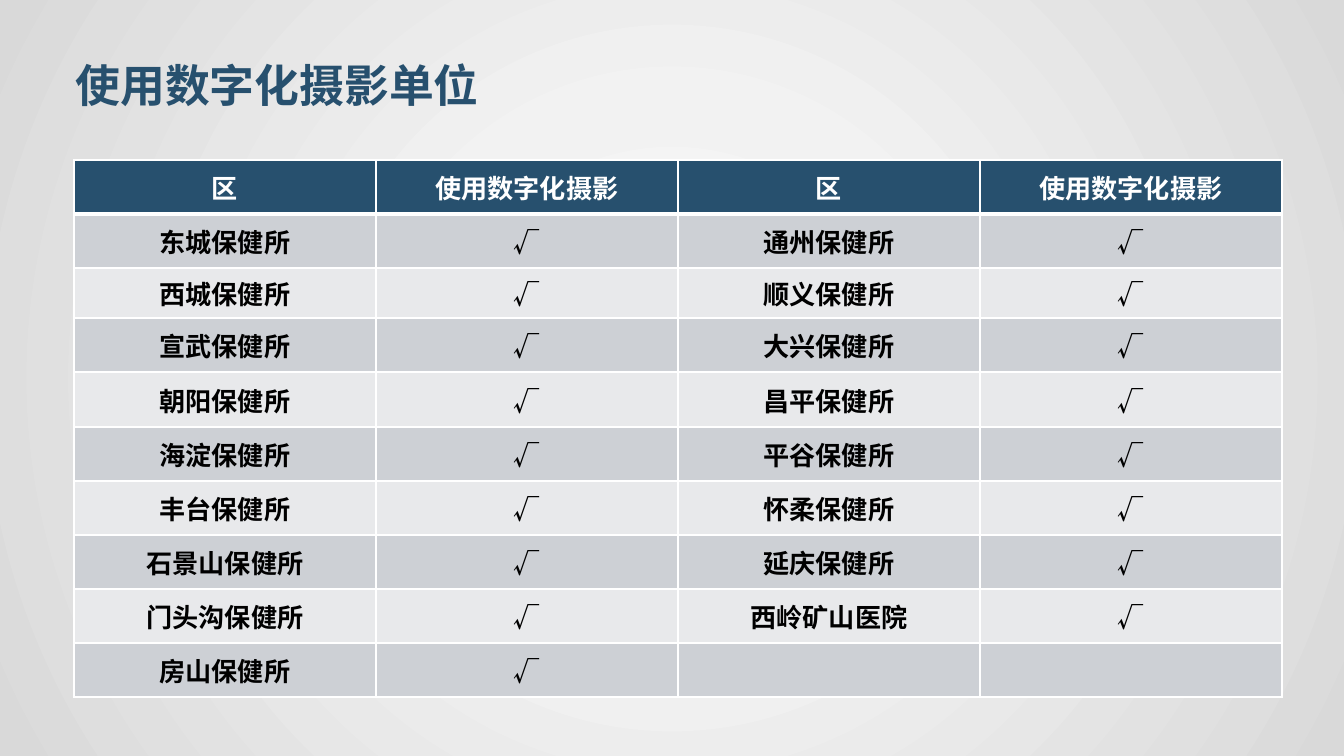
import pptx
import pptx.dml.color
import pptx.enum.text
import pptx.oxml
import pptx.oxml.ns
import pptx.util
from dataclasses import dataclass
from lxml import etree

PX = 6803.57  # EMU per px, at 134.4 px to the inch
NAMESPACES = pptx.oxml.ns.nsdecls("a")
qn = pptx.oxml.ns.qn


@dataclass(frozen=True)
class Theme:
    font: str = "Noto Sans CJK SC"
    navy: str = "27506E"
    white: str = "FFFFFF"
    black: str = "000000"
    bands: tuple = ("CDD0D5", "E8E9EB")
    background: tuple = ((0, "FFFFFF"), (35, "F2F2F2"), (100, "D9D9D9"))
    title_size: int = 24
    cell_size: int = 14
    thin: int = 1
    thick: int = 3


THEME = Theme()
HEADER = ("区", "使用数字化摄影")
LEFT_UNITS = ("东城保健所", "西城保健所", "宣武保健所", "朝阳保健所", "海淀保健所",
              "丰台保健所", "石景山保健所", "门头沟保健所", "房山保健所")
RIGHT_UNITS = ("通州保健所", "顺义保健所", "大兴保健所", "昌平保健所", "平谷保健所",
               "怀柔保健所", "延庆保健所", "西岭矿山医院", "")
ROW_HEIGHTS = (54, 54, 50, 54, 55, 54, 54, 54, 54, 54)
COLUMN_WIDTH = 302


def px(length):
    return pptx.util.Emu(round(length * PX))


def color(value):
    return pptx.dml.color.RGBColor.from_string(value)


def style_paragraph(paragraph, size, text_color, alignment):
    paragraph.alignment = alignment
    font = paragraph.font
    font.size = pptx.util.Pt(size)
    font.bold = True
    font.color.rgb = color(text_color)
    font.name = THEME.font


def set_east_asian_font(shape):
    for properties in shape.element.iter(qn("a:defRPr")):
        etree.SubElement(properties, qn("a:ea"), typeface=THEME.font)


def set_background(slide):
    fill = slide.background.fill
    fill.solid()
    stops = "".join(
        f'<a:gs pos="{position * 1000}"><a:srgbClr val="{value}"/></a:gs>'
        for position, value in THEME.background)
    gradient = pptx.oxml.parse_xml(
        f'<a:gradFill {NAMESPACES} rotWithShape="1"><a:gsLst>{stops}</a:gsLst>'
        '<a:path path="circle"><a:fillToRect l="50000" t="50000" r="50000" b="50000"/>'
        '</a:path></a:gradFill>')
    properties = next(slide.element.iter(qn("p:bgPr")))
    properties.replace(properties.find(qn("a:solidFill")), gradient)


def add_title(slide, text):
    title = slide.shapes.title
    title.left, title.top, title.width, title.height = map(px, (62, 51, 434, 67))
    frame = title.text_frame
    frame.text = text
    frame.word_wrap = False
    frame.vertical_anchor = pptx.enum.text.MSO_ANCHOR.MIDDLE
    style_paragraph(frame.paragraphs[0], THEME.title_size, THEME.navy,
                    pptx.enum.text.PP_ALIGN.LEFT)
    set_east_asian_font(title)


def set_borders(cell, top, bottom):
    properties = cell._tc.get_or_add_tcPr()
    sides = (("L", THEME.thin), ("R", THEME.thin), ("T", top), ("B", bottom))
    for index, (side, width) in enumerate(sides):
        properties.insert(index, pptx.oxml.parse_xml(
            f'<a:ln{side} {NAMESPACES} w="{pptx.util.Pt(width)}"><a:solidFill>'
            f'<a:srgbClr val="{THEME.white}"/></a:solidFill></a:ln{side}>'))


def format_cell(cell, text, row):
    is_header = row == 0
    # Text
    cell.margin_left = cell.margin_right = cell.margin_top = px(1)
    cell.margin_bottom = 0
    cell.vertical_anchor = pptx.enum.text.MSO_ANCHOR.MIDDLE
    cell.text = text
    style_paragraph(cell.text_frame.paragraphs[0], THEME.cell_size,
                    THEME.white if is_header else THEME.black,
                    pptx.enum.text.PP_ALIGN.CENTER)
    # Fill and borders, with a thick line under the header
    cell.fill.solid()
    cell.fill.fore_color.rgb = color(
        THEME.navy if is_header else THEME.bands[(row - 1) % 2])
    set_borders(cell, top=THEME.thick if row == 1 else THEME.thin,
                bottom=THEME.thick if is_header else THEME.thin)


def add_unit_table(slide):
    rows = [HEADER * 2]
    for left, right in zip(LEFT_UNITS, RIGHT_UNITS):
        rows.append((left, "√", right, "√" if right else ""))
    columns = len(rows[0])
    table_shape = slide.shapes.add_table(
        len(rows), columns, px(74), px(160),
        px(COLUMN_WIDTH * columns), px(sum(ROW_HEIGHTS)))
    table = table_shape.table
    for column in table.columns:
        column.width = px(COLUMN_WIDTH)
    for row, (texts, height) in enumerate(zip(rows, ROW_HEIGHTS)):
        table.rows[row].height = px(height)
        for column, text in enumerate(texts):
            format_cell(table.cell(row, column), text, row)
    set_east_asian_font(table_shape)


def main():
    presentation = pptx.Presentation()
    presentation.slide_width, presentation.slide_height = px(1344), px(756)
    slide = presentation.slides.add_slide(presentation.slide_layouts[5])
    set_background(slide)
    add_title(slide, "使用数字化摄影单位")
    add_unit_table(slide)
    presentation.save("out.pptx")


if __name__ == "__main__":
    main()
